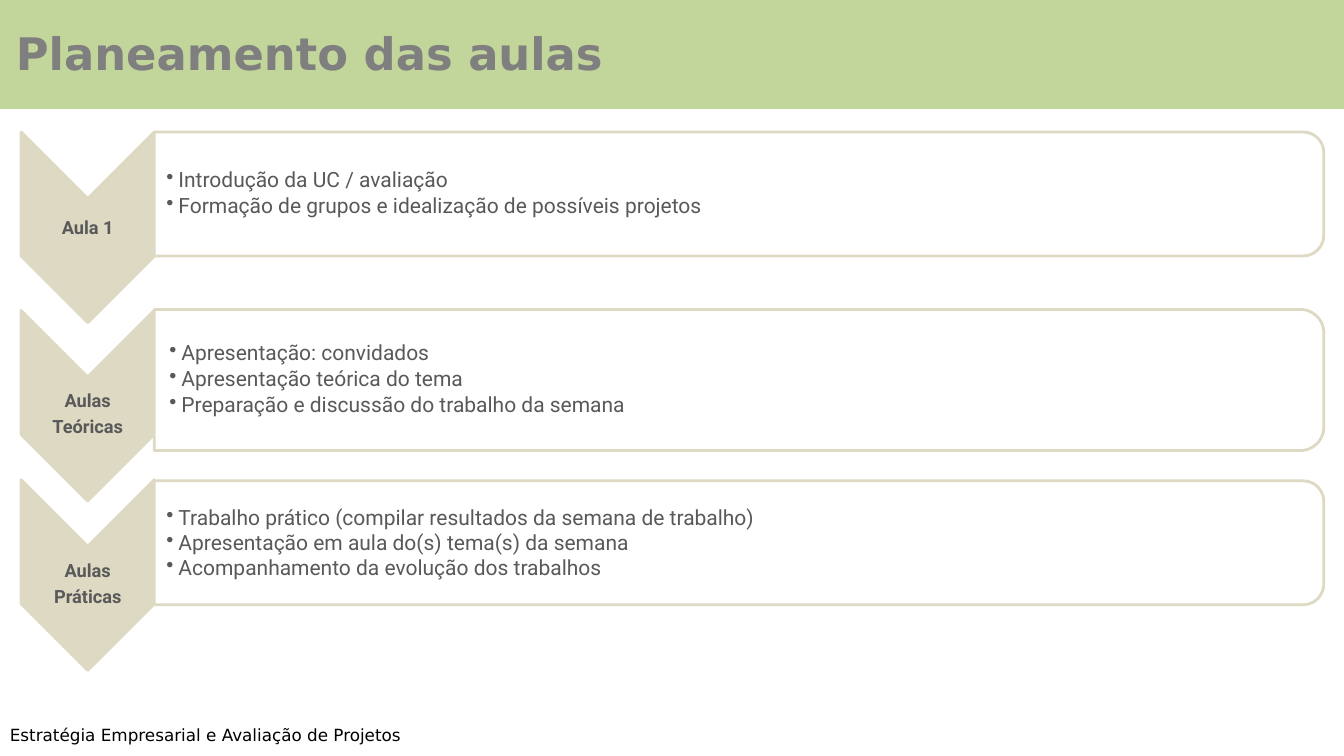
import dataclasses

import pptx
import pptx.dml.color
import pptx.enum.shapes
import pptx.enum.text
import pptx.oxml
import pptx.oxml.ns
import pptx.util

Inches = pptx.util.Inches
Pt = pptx.util.Pt
RGBColor = pptx.dml.color.RGBColor
Kind = pptx.enum.shapes.MSO_SHAPE
Anchor = pptx.enum.text.MSO_ANCHOR
Align = pptx.enum.text.PP_ALIGN

GREEN = RGBColor(0xC2, 0xD5, 0x9B)
SAND = RGBColor(0xDD, 0xD9, 0xC3)
WHITE = RGBColor(0xFF, 0xFF, 0xFF)
BLACK = RGBColor(0x00, 0x00, 0x00)
GREY = RGBColor(0x7F, 0x7F, 0x7F)
DARK = RGBColor(0x59, 0x59, 0x59)


@dataclasses.dataclass
class Box:
    left: float
    top: float
    width: float
    height: float

    def turned(self) -> "Box":
        """Frame that covers this box after a quarter turn."""
        shift = (self.width - self.height) / 2
        return Box(self.left + shift, self.top - shift, self.height, self.width)

    def sizes(self) -> list:
        return [Inches(n) for n in dataclasses.astuple(self)]


@dataclasses.dataclass
class Style:
    size: float
    color: RGBColor
    font: str = "Roboto"
    bold: bool = False
    align: Align = Align.LEFT
    spacing: float = 1.0
    before: float = 0
    bullet: bool = False


@dataclasses.dataclass
class Lesson:
    label: list[str]
    points: list[str]
    arrow: float
    panel: Box
    text: Box
    style: Style


TITLE = Style(32, GREY, "DejaVu Sans", bold=True)
FOOT = Style(12, BLACK, "DejaVu Sans")
LABEL = Style(13, DARK, bold=True, align=Align.CENTER, spacing=0.9, before=4.5)
POINT = Style(15, DARK, spacing=0.9, before=2.2, bullet=True)
PLAIN = dataclasses.replace(POINT, spacing=1.0, before=0)

LESSONS = [
    Lesson(["Aula 1"],
           ["Introdução da UC / avaliação",
            "Formação de grupos e idealização de possíveis projetos"],
           1.31, Box(1.53, 1.31, 11.6, 1.23), Box(1.53, 1.37, 11.54, 1.11), POINT),
    Lesson(["Aulas", "Teóricas"],
           ["Apresentação: convidados",
            "Apresentação teórica do tema",
            "Preparação e discussão do trabalho da semana"],
           3.08, Box(1.53, 3.07, 11.6, 1.4), Box(1.56, 3.21, 11.54, 1.11), POINT),
    Lesson(["Aulas", "Práticas"],
           ["Trabalho prático (compilar resultados da semana de trabalho)",
            "Apresentação em aula do(s) tema(s) da semana",
            "Acompanhamento da evolução dos trabalhos"],
           4.76, Box(1.53, 4.77, 11.6, 1.23), Box(1.53, 4.75, 11.54, 1.26), PLAIN),
]


def add_bullet(para) -> None:
    props = para._p.get_or_add_pPr()
    props.set("marL", str(Inches(0.12)))
    props.set("indent", str(Inches(-0.12)))
    space = pptx.oxml.ns.nsdecls("a")
    for part in (f'<a:buClr {space}><a:srgbClr val="{DARK}"/></a:buClr>',
                 f'<a:buChar {space} char="•"/>'):
        props.append(pptx.oxml.parse_xml(part))


def add_text(slide, box: Box, lines: list[str], style: Style,
             pads: tuple = (0.1, 0.05, 0.1, 0.05), anchor: Anchor = Anchor.TOP) -> None:
    frame = slide.shapes.add_textbox(*box.sizes()).text_frame
    frame.word_wrap = True
    frame.vertical_anchor = anchor
    (frame.margin_left, frame.margin_top,
     frame.margin_right, frame.margin_bottom) = map(Inches, pads)
    for index, line in enumerate(lines):
        para = frame.add_paragraph() if index else frame.paragraphs[0]
        para.alignment = style.align
        para.line_spacing = style.spacing
        para.space_before = Pt(style.before if index else 0)
        if style.bullet:
            para.level = 1
            add_bullet(para)
        run = para.add_run()
        run.text = line
        run.font.name = style.font
        run.font.size = Pt(style.size)
        run.font.bold = style.bold
        run.font.color.rgb = style.color


def add_block(slide, kind: Kind, box: Box, fill: RGBColor, line: RGBColor,
              turn: bool = False):
    frame = box.turned() if turn else box
    shape = slide.shapes.add_shape(kind, *frame.sizes())
    shape.rotation = 90 if turn else 0
    shape.shadow.inherit = False
    shape.fill.solid()
    shape.fill.fore_color.rgb = fill
    shape.line.color.rgb = line
    shape.line.width = Pt(2)
    return shape


def add_lesson(slide, item: Lesson) -> None:
    # Arrow on the left
    arrow = Box(0.21, item.arrow, 1.32, 1.89)
    add_block(slide, Kind.CHEVRON, arrow, SAND, SAND, turn=True)

    # Panel with two rounded corners, slightly see-through
    panel = add_block(slide, Kind.ROUND_2_SAME_RECTANGLE, item.panel, WHITE, SAND, turn=True)
    panel.adjustments[0] = 0.167
    color = panel.fill._xPr.find(".//" + pptx.oxml.ns.qn("a:srgbClr"))
    space = pptx.oxml.ns.nsdecls("a")
    color.append(pptx.oxml.parse_xml(f'<a:alpha {space} val="89000"/>'))

    # Label and points
    label = Box(arrow.left, item.arrow + 0.67 + 0.08 * (len(item.label) - 1), 1.32, 0.57)
    add_text(slide, label, item.label, LABEL, (0.01,) * 4, Anchor.MIDDLE)
    add_text(slide, item.text, item.points, item.style,
             (0.12, 0.01, 0.01, 0.01), Anchor.MIDDLE)


def main() -> None:
    deck = pptx.Presentation()
    deck.slide_width = Inches(13.33)
    deck.slide_height = Inches(7.5)
    slide = deck.slides.add_slide(deck.slide_layouts[6])

    # Header band, footer and title
    add_block(slide, Kind.RECTANGLE, Box(-0.05, -0.03, 13.38, 1.1), GREEN, GREEN)
    add_text(slide, Box(0, 7.14, 4.14, 0.3),
             ["Estratégia Empresarial e Avaliação de Projetos"], FOOT)
    add_text(slide, Box(0.06, 0.21, 6.04, 0.64), ["Planeamento das aulas"], TITLE)

    # Lesson rows
    for item in LESSONS:
        add_lesson(slide, item)

    deck.save("out.pptx")


if __name__ == "__main__":
    main()
